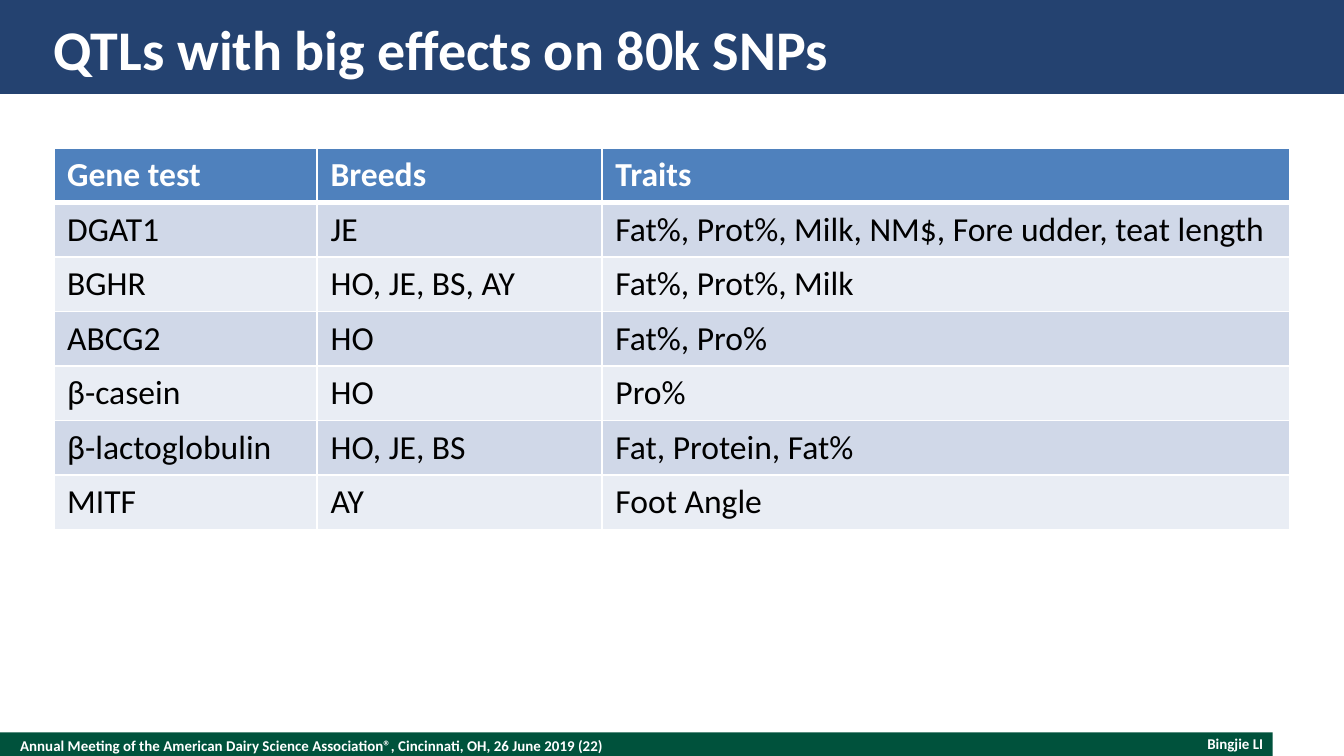
from lxml import etree
from pptx import Presentation
from pptx import util as u
from pptx.dml import color
from pptx.enum import shapes, text
from pptx.oxml import ns

COLORS = {
    "white": "FFFFFF",
    "black": "000000",
    "navy": "244270",
    "green": "00523C",
    "header": "4F81BD",
    "odd_row": "D0D8E8",
    "even_row": "E9EDF4",
}
COLUMN_WIDTHS = [1.96, 2.12, 5.12]
GENE_ROWS = [
    ["Gene test", "Breeds", "Traits"],
    ["DGAT1", "JE", "Fat%, Prot%, Milk, NM$, Fore udder, teat length"],
    ["BGHR", "HO, JE, BS, AY", "Fat%, Prot%, Milk"],
    ["ABCG2", "HO", "Fat%, Pro%"],
    ["β-casein", "HO", "Pro%"],
    ["β-lactoglobulin", "HO, JE, BS", "Fat, Protein, Fat%"],
    ["MITF", "AY", "Foot Angle"],
]


def rgb(name):
    return color.RGBColor.from_string(COLORS[name])


def write(frame, words, shade, align=text.PP_ALIGN.LEFT, **formats):
    para = frame.paragraphs[0]
    para.alignment = align
    span = para.add_run()
    span.text = words
    for key, value in {"name": "Calibri", **formats}.items():
        setattr(span.font, key, value)
    span.font.color.rgb = rgb(shade)


def add_band(page, box, shade):
    band = page.shapes.add_shape(shapes.MSO_SHAPE.RECTANGLE, *map(u.Inches, box))
    band.shadow.inherit = False
    band.fill.solid()
    band.fill.fore_color.rgb = rgb(shade)
    band.line.fill.background()


def add_label(page, box, words, size, align=text.PP_ALIGN.LEFT):
    frame = page.shapes.add_textbox(*map(u.Inches, box)).text_frame
    settings = {
        "word_wrap": True,
        "vertical_anchor": text.MSO_ANCHOR.MIDDLE,
        "margin_left": 0,
        "margin_top": 0,
        "margin_right": 0,
        "margin_bottom": 0,
    }
    for key, value in settings.items():
        setattr(frame, key, value)
    write(frame, words, "white", align, size=u.Pt(size), bold=True)


def add_borders(cell, widths):
    properties = cell._tc.get_or_add_tcPr()
    for side, width in widths.items():
        line = etree.SubElement(properties, ns.qn(f"a:ln{side}"), w=str(u.Pt(width)))
        fill = etree.SubElement(line, ns.qn("a:solidFill"))
        etree.SubElement(fill, ns.qn("a:srgbClr"), val=COLORS["white"])


def title_region(page, box):
    left, top, width, height = box
    add_band(page, box, "navy")
    add_label(page, (left + 0.4, top + 0.1, width - 0.8, 0.52),
              "QTLs with big effects on 80k SNPs", 30)


def gene_table(page, box):
    table = page.shapes.add_table(
        len(GENE_ROWS), len(COLUMN_WIDTHS), *map(u.Inches, box)).table
    for column, width in zip(table.columns, COLUMN_WIDTHS):
        column.width = u.Inches(width)
    for row_index, values in enumerate(GENE_ROWS):
        is_header = row_index == 0
        band = "odd_row" if row_index % 2 else "even_row"
        borders = {"L": 1, "R": 1, "T": 3 if row_index == 1 else 1,
                   "B": 3 if is_header else 1}
        for column_index, words in enumerate(values):
            cell = table.cell(row_index, column_index)
            add_borders(cell, borders)
            cell.fill.solid()
            cell.fill.fore_color.rgb = rgb("header" if is_header else band)
            write(cell.text_frame, words, "white" if is_header else "black",
                  size=u.Pt(18), bold=is_header)


def footer_region(page, box):
    left, top, width, height = box
    add_band(page, box, "green")
    add_label(page, (left + 0.15, top, 6.5, height),
              "Annual Meeting of the American Dairy Science Association®, "
              "Cincinnati, OH, 26 June 2019 (22)", 8)
    add_label(page, (left + width - 2.27, top + 0.02, 2.2, 0.13),
              "Bingjie LI", 8, text.PP_ALIGN.RIGHT)


def main():
    deck = Presentation()
    deck.slide_width = u.Inches(10)
    deck.slide_height = deck.slide_width * 9 // 16
    page = deck.slides.add_slide(deck.slide_layouts[6])
    footer_region(page, (0, 5.45, 9.47, 0.2))
    title_region(page, (0, 0, 10, 0.7))
    gene_table(page, (0.4, 1.1, 9.2, 2.84))
    deck.save("out.pptx")


if __name__ == "__main__":
    main()
